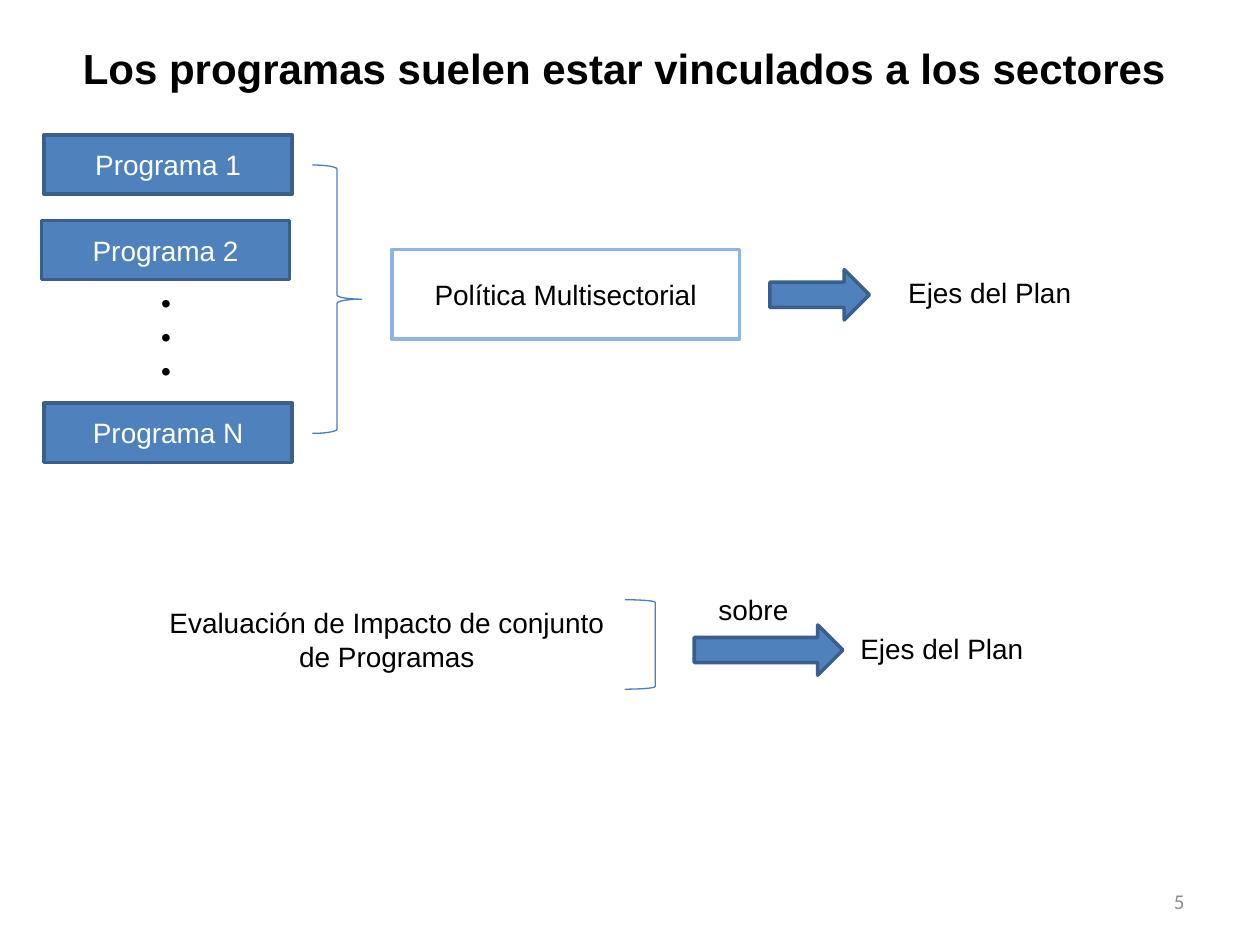
from pptx import Presentation
from pptx.dml.color import RGBColor
from pptx.enum.shapes import MSO_SHAPE
from pptx.enum.text import MSO_ANCHOR, MSO_AUTO_SIZE, PP_ALIGN
from pptx.util import Inches, Pt

BLACK = RGBColor(0x00, 0x00, 0x00)
WHITE = RGBColor(0xFF, 0xFF, 0xFF)
GRAY = RGBColor(0x8C, 0x8C, 0x8C)
BLUE = RGBColor(0x4F, 0x81, 0xBD)
DARK_BLUE = RGBColor(0x3A, 0x5F, 0x8C)
LIGHT_BLUE = RGBColor(0x8E, 0xB4, 0xE3)
BRACKET_BLUE = RGBColor(0x4B, 0x7E, 0xBC)

BODY = {"name": "Arial", "size": Pt(16), "bold": False}
TITLE = {"name": "Arial", "size": Pt(24), "bold": True}
NUMBER = {"name": "Calibri", "size": Pt(12), "bold": False}
GROWING = {"word_wrap": True, "auto_size": MSO_AUTO_SIZE.SHAPE_TO_FIT_TEXT}
CENTERED = {"word_wrap": True, "vertical_anchor": MSO_ANCHOR.MIDDLE}

PROGRAM_SIZE = (1.97, 0.47)
PROGRAMS = [
    ("Programa 1", 0.35, 1.07),
    ("Programa 2", 0.33, 1.75),
    ("Programa N", 0.35, 3.2),
]
POLICY = ("Política Multisectorial", (3.11, 1.98, 2.76, 0.71))
BRACKETS = [
    (MSO_SHAPE.RIGHT_BRACE, (2.48, 1.31, 0.39, 2.13)),
    (MSO_SHAPE.RIGHT_BRACKET, (4.96, 4.76, 0.24, 0.71)),
]
ARROWS = [(6.11, 2.14, 0.79, 0.4), (5.51, 4.96, 1.18, 0.4)]
LABELS = [
    ("Los programas suelen estar vinculados a los sectores",
     (0.35, 0.29, 9.21, 0.5), PP_ALIGN.CENTER, TITLE, BLACK, GROWING),
    ("•••", (1.18, 2.22, 0.28, 0.91), PP_ALIGN.LEFT, BODY, BLACK, GROWING),
    ("Ejes del Plan", (7.11, 2.14, 2.6, 0.37), PP_ALIGN.LEFT, BODY, BLACK, GROWING),
    ("Evaluación de Impacto de conjunto de Programas",
     (1.18, 4.76, 3.78, 0.64), PP_ALIGN.CENTER, BODY, BLACK, GROWING),
    ("sobre", (5.51, 4.65, 0.94, 0.37), PP_ALIGN.CENTER, BODY, BLACK, GROWING),
    ("Ejes del Plan", (6.73, 4.96, 2.6, 0.37), PP_ALIGN.LEFT, BODY, BLACK, GROWING),
    ("5", (7.17, 6.95, 2.33, 0.4), PP_ALIGN.RIGHT, NUMBER, GRAY, CENTERED),
]


def apply_format(target, values):
    for attribute, value in values.items():
        setattr(target, attribute, value)


def write(holder, text, alignment, font, color, frame_format):
    apply_format(holder.text_frame, frame_format)
    paragraph = holder.text_frame.paragraphs[0]
    paragraph.alignment = alignment
    run = paragraph.add_run()
    run.text = text
    apply_format(run.font, font)
    run.font.color.rgb = color


def draw(slide, preset, box, fill, outline, weight):
    shape = slide.shapes.add_shape(preset, *map(Inches, box))
    shape.shadow.inherit = False
    if fill is None:
        shape.fill.background()
    else:
        shape.fill.solid()
        shape.fill.fore_color.rgb = fill
    shape.line.color.rgb = outline
    shape.line.width = Pt(weight)
    return shape


def main():
    presentation = Presentation()
    presentation.slide_width = Inches(10)
    presentation.slide_height = Inches(7.5)
    slide = presentation.slides.add_slide(presentation.slide_layouts[6])

    boxes = [(name, (left, top, *PROGRAM_SIZE), BLUE, DARK_BLUE, WHITE)
             for name, left, top in PROGRAMS]
    boxes.append((*POLICY, WHITE, LIGHT_BLUE, BLACK))
    for name, box, fill, outline, color in boxes:
        rectangle = draw(slide, MSO_SHAPE.RECTANGLE, box, fill, outline, 2)
        write(rectangle, name, PP_ALIGN.CENTER, BODY, color, CENTERED)

    for preset, box in BRACKETS:
        draw(slide, preset, box, None, BRACKET_BLUE, 0.75)
    for box in ARROWS:
        draw(slide, MSO_SHAPE.RIGHT_ARROW, box, BLUE, DARK_BLUE, 2)
    for text, box, *style in LABELS:
        write(slide.shapes.add_textbox(*map(Inches, box)), text, *style)

    presentation.save("out.pptx")


if __name__ == "__main__":
    main()
